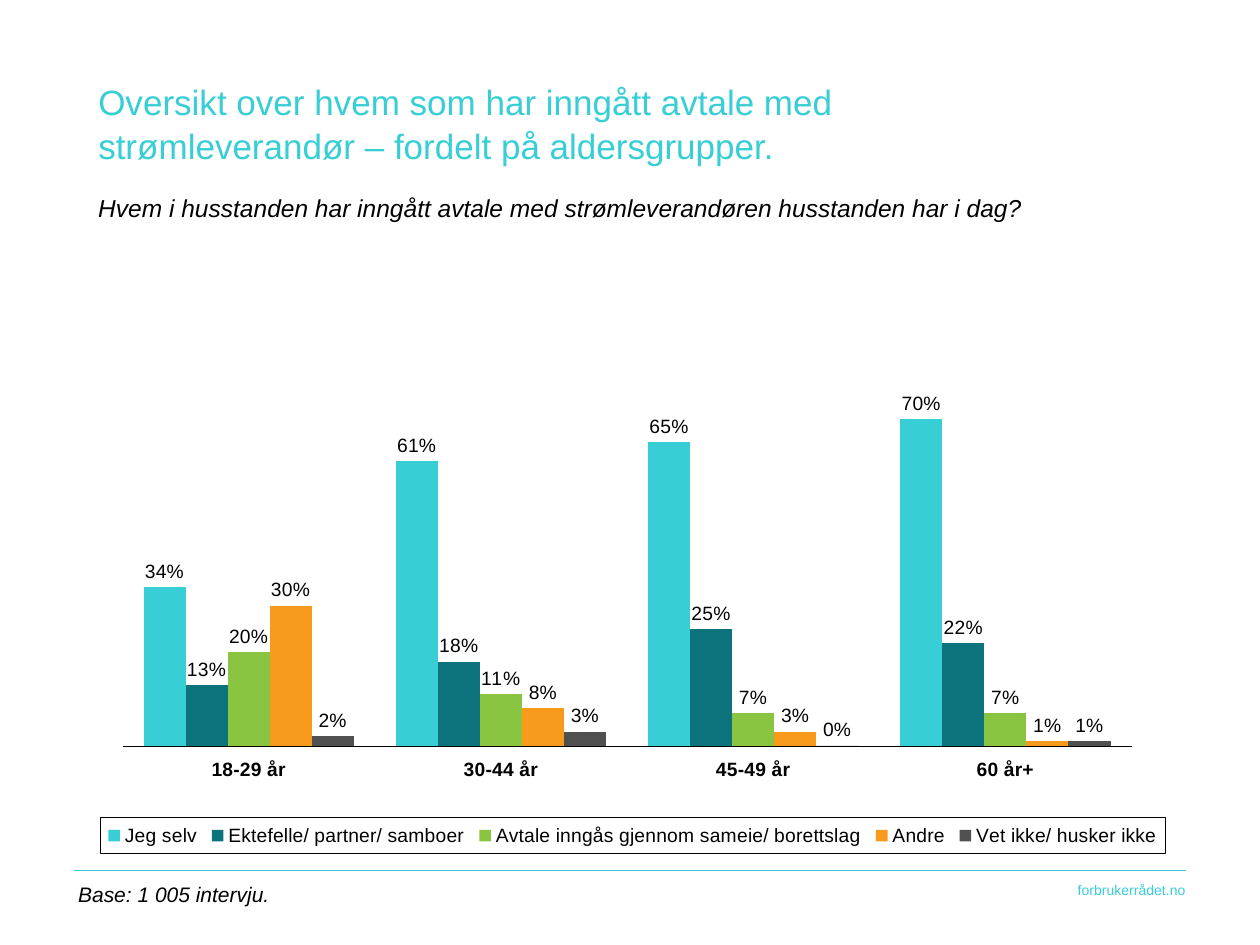
from dataclasses import dataclass
from lxml.etree import SubElement
from pptx import Presentation
from pptx.chart.data import CategoryChartData
from pptx.dml.color import RGBColor
from pptx.enum.chart import XL_CHART_TYPE as ChartType
from pptx.enum.chart import XL_LABEL_POSITION as LabelPosition
from pptx.enum.chart import XL_LEGEND_POSITION as LegendPosition
from pptx.enum.chart import XL_TICK_LABEL_POSITION as TickLabelPosition
from pptx.enum.chart import XL_TICK_MARK as TickMark
from pptx.enum.shapes import MSO_CONNECTOR as Connector
from pptx.enum.text import MSO_ANCHOR as Anchor
from pptx.enum.text import MSO_AUTO_SIZE as AutoSize
from pptx.enum.text import PP_ALIGN as Align
from pptx.oxml import parse_xml
from pptx.oxml.ns import nsdecls, qn
from pptx.util import Inches, Pt


@dataclass(frozen=True)
class Theme:
    """Colours, font and type sizes of the slide."""
    font: str = "Arial"
    accent: str = "38CED5"
    rule: str = "33CDD4"
    ink: str = "000000"
    series: tuple = ("38CED5", "0C737D", "89C540", "F89A1C", "505050")
    title: int = 20
    question: int = 14
    base: int = 12
    chart: int = 11
    address: int = 8


THEME = Theme()
AGE_GROUPS = ("18-29 år", "30-44 år", "45-49 år", "60 år+")
ANSWERS = {
    "Jeg selv": (0.34, 0.61, 0.65, 0.70),
    "Ektefelle/ partner/ samboer": (0.13, 0.18, 0.25, 0.22),
    "Avtale inngås gjennom sameie/ borettslag": (0.20, 0.11, 0.07, 0.07),
    "Andre": (0.30, 0.08, 0.03, 0.01),
    "Vet ikke/ husker ikke": (0.02, 0.03, 0, 0.01),
}


def place(shape, left, top, width, height):
    """Move a shape to a box given in inches."""
    shape.left, shape.top = Inches(left), Inches(top)
    shape.width, shape.height = Inches(width), Inches(height)


def style_font(font, size, color, bold=False, italic=False):
    """Apply the theme font with the given size and colour."""
    font.name, font.size = THEME.font, Pt(size)
    font.bold, font.italic = bold, italic
    font.color.rgb = RGBColor.from_string(color)


def write(shape, text, size, color, italic=False, align=Align.LEFT, anchor=Anchor.TOP, indent=0):
    """Fill a text shape with one formatted run."""
    frame = shape.text_frame
    frame.word_wrap, frame.auto_size = True, AutoSize.NONE
    frame.vertical_anchor = anchor
    frame.margin_left = Inches(indent)
    frame.margin_top = frame.margin_right = frame.margin_bottom = 0
    paragraph = frame.paragraphs[0]
    paragraph.alignment = align
    run = paragraph.add_run()
    run.text = text
    style_font(run.font, size, color, italic=italic)
    return paragraph


def add_text(slide, box, *content, **options):
    """Add a text box holding one formatted run."""
    shape = slide.shapes.add_textbox(*map(Inches, box))
    return write(shape, *content, **options)


def add_heading(slide, left, top, width):
    """Place the title and the survey question below it."""
    place(slide.shapes.title, left, top, width, 0.75)
    title = write(
        slide.shapes.title,
        "Oversikt over hvem som har inngått avtale med strømleverandør – fordelt på aldersgrupper.",
        THEME.title, THEME.accent)
    title.line_spacing = 1.05
    add_text(slide, (left, top + 0.91, width, 0.25),
             "Hvem i husstanden har inngått avtale med strømleverandøren husstanden har i dag?",
             THEME.question, THEME.ink, italic=True)


def set_layout(parent, position, box, inner=False):
    """Give a chart part a manual layout in fractions of the chart."""
    for old in parent.findall(qn("c:layout")):
        parent.remove(old)
    layout = parse_xml(f"<c:layout {nsdecls('c')}/>")
    manual = SubElement(layout, qn("c:manualLayout"))
    settings = [("layoutTarget", "inner")] if inner else []
    settings += [("xMode", "edge"), ("yMode", "edge"), *zip("xywh", box)]
    for name, value in settings:
        SubElement(manual, qn(f"c:{name}")).set("val", str(value))
    parent.insert(position, layout)


def format_axes(chart):
    """Show the age groups and hide the value scale."""
    categories, values = chart.category_axis, chart.value_axis
    categories.major_tick_mark = categories.minor_tick_mark = TickMark.NONE
    categories.tick_label_position = TickLabelPosition.LOW
    categories.has_major_gridlines = values.has_major_gridlines = False
    style_font(categories.tick_labels.font, THEME.chart, THEME.ink, bold=True)
    categories.format.line.color.rgb = RGBColor.from_string(THEME.ink)
    categories.format.line.width = Pt(0.22)
    values.minimum_scale, values.maximum_scale, values.major_unit = 0, 1, 0.1
    values.visible = False


def format_legend(chart):
    """Put an outlined legend along the bottom."""
    chart.has_legend = True
    legend = chart.legend
    legend.position = LegendPosition.BOTTOM
    legend.include_in_layout = False
    style_font(legend.font, THEME.chart, THEME.ink)
    element = legend._element
    set_layout(element, 1, (0.05, 0.92, 0.95, 0.06))
    element.find(qn("c:overlay")).addnext(parse_xml(
        f'<c:spPr {nsdecls("c", "a")}><a:ln w="3175"><a:solidFill>'
        f'<a:srgbClr val="{THEME.ink}"/></a:solidFill></a:ln></c:spPr>'))


def add_answer_chart(slide, box):
    """Place the clustered columns of answers by age group."""
    data = CategoryChartData(number_format="0%")
    data.categories = AGE_GROUPS
    for name, shares in ANSWERS.items():
        data.add_series(name, shares)
    chart = slide.shapes.add_chart(ChartType.COLUMN_CLUSTERED, *map(Inches, box), data).chart
    chart.has_title = False
    style_font(chart.font, THEME.chart, THEME.ink)
    plot = chart.plots[0]
    plot.gap_width, plot.overlap, plot.vary_by_categories = 100, 0, False
    for series, color in zip(plot.series, THEME.series):
        series.format.fill.solid()
        series.format.fill.fore_color.rgb = RGBColor.from_string(color)
        labels = series.data_labels
        labels.show_value = True
        labels.number_format, labels.number_format_is_linked = "0%", False
        labels.position = LabelPosition.OUTSIDE_END
        style_font(labels.font, THEME.chart, THEME.ink)
    format_axes(chart)
    format_legend(chart)
    set_layout(chart._chartSpace.chart.plotArea, 0, (0.07, 0.02, 0.9, 0.78), inner=True)


def add_footer(slide, left, top, width):
    """Place the rule, the base note and the web address."""
    right = left + width
    rule = slide.shapes.add_connector(
        Connector.STRAIGHT, Inches(left), Inches(top), Inches(right), Inches(top))
    rule.line.color.rgb = RGBColor.from_string(THEME.rule)
    rule.line.width = Pt(0.92)
    SubElement(rule._element.spPr, qn("a:effectLst"))
    add_text(slide, (right - 2.91, top + 0.09, 2.91, 0.2), "forbrukerrådet.no",
             THEME.address, THEME.accent, align=Align.RIGHT)
    add_text(slide, (0, top + 0.09, 8.31, 0.2), "Base: 1 005 intervju.",
             THEME.base, THEME.ink, italic=True, anchor=Anchor.BOTTOM, indent=0.62)


def main():
    """Build and save the presentation."""
    presentation = Presentation()
    presentation.slide_width, presentation.slide_height = Inches(10), Inches(7.5)
    slide = presentation.slides.add_slide(presentation.slide_layouts[5])
    add_footer(slide, 0.59, 6.91, 8.82)
    add_answer_chart(slide, (0.35, 2.12, 8.9, 4.75))
    add_heading(slide, 0.78, 0.62, 7.84)
    presentation.save("out.pptx")


if __name__ == "__main__":
    main()
